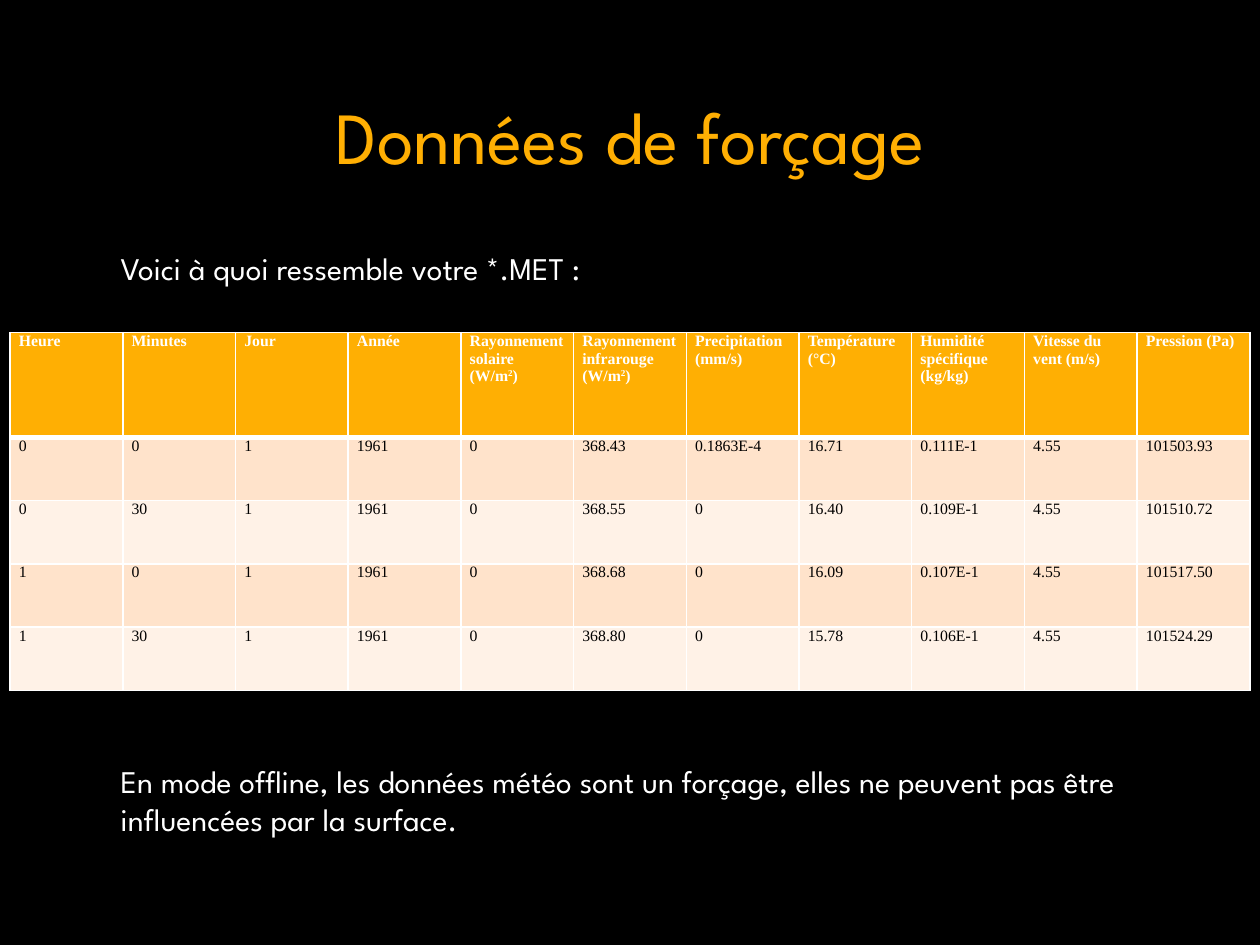
import pptx
import pptx.dml.color
import pptx.enum.text
import pptx.oxml
import pptx.oxml.ns
import pptx.util
from pptx.util import Inches

TITLE = "Données de forçage"
INTRO = "Voici à quoi ressemble votre *.MET :"
REMARK = ("En mode offline, les données météo sont un forçage, "
          "elles ne peuvent pas être influencées par la surface.")
# Text between two ^ marks is superscript.
HEADINGS = ["Heure", "Minutes", "Jour", "Année",
            "Rayonnement solaire (W/m^2^)", "Rayonnement infrarouge (W/m^2^)",
            "Precipitation (mm/s)", "Température (°C)",
            "Humidité spécifique (kg/kg)", "Vitesse du vent (m/s)", "Pression (Pa)"]
READINGS = [
    ["0", "0", "1", "1961", "0", "368.43", "0.1863E-4", "16.71", "0.111E-1", "4.55", "101503.93"],
    ["0", "30", "1", "1961", "0", "368.55", "0", "16.40", "0.109E-1", "4.55", "101510.72"],
    ["1", "0", "1", "1961", "0", "368.68", "0", "16.09", "0.107E-1", "4.55", "101517.50"],
    ["1", "30", "1", "1961", "0", "368.80", "0", "15.78", "0.106E-1", "4.55", "101524.29"],
]

THEME = {
    "background": "000000", "accent": "FFAF03", "light": "FFFFFF", "dark": "000000",
    "bands": ["FFE3CB", "FFF2E7"],
    "text_font": "League Spartan", "table_font": "Times New Roman",
    "title_size": 42, "body_size": 18, "table_size": 9,
    "rule": 1, "heading_rule": 3,
}
TITLE_BOX = (0.67, 0.64, 8.66, 0.86)
INTRO_BOX = (0.86, 1.93, 8.34, 0.4)
REMARK_BOX = (0.86, 6, 8.34, 0.71)
TABLE_BOX = (0.08, 2.64, 9.84, 2.84)
HEADING_HEIGHT = 0.83


def rgb(code):
    return pptx.dml.color.RGBColor.from_string(code)


def write(frame, text, font=THEME["text_font"], size=THEME["body_size"],
          color=THEME["light"], bold=False, align=pptx.enum.text.PP_ALIGN.LEFT):
    """Fill a text frame with one paragraph, raising text between ^ marks."""
    frame.word_wrap = True
    paragraph = frame.paragraphs[0]
    paragraph.alignment = align
    for index, part in enumerate(text.split("^")):
        run = paragraph.add_run()
        run.text = part
        run.font.name = font
        run.font.size = pptx.util.Pt(size)
        run.font.bold = bold
        run.font.color.rgb = rgb(color)
        if index % 2:
            run._r.get_or_add_rPr().set("baseline", "30000")


def set_borders(cell, **widths):
    """Draw the L, R, T and B cell borders; call before setting the fill."""
    properties = cell._tc.get_or_add_tcPr()
    for side, width in widths.items():
        properties.append(pptx.oxml.parse_xml(
            f'<a:ln{side} {pptx.oxml.ns.nsdecls("a")} w="{pptx.util.Pt(width)}">'
            f'<a:solidFill><a:srgbClr val="{THEME["light"]}"/></a:solidFill></a:ln{side}>'))


def add_note(slide, box, text):
    note = slide.shapes.add_textbox(*map(Inches, box))
    write(note.text_frame, text)


def add_readings(slide):
    left, top, width, height = TABLE_BOX
    rows = [HEADINGS] + READINGS
    table = slide.shapes.add_table(len(rows), len(HEADINGS), *map(Inches, TABLE_BOX)).table
    for column in table.columns:
        column.width = Inches(width / len(HEADINGS))
    for row_index, values in enumerate(rows):
        heading = row_index == 0
        table.rows[row_index].height = Inches(
            HEADING_HEIGHT if heading else (height - HEADING_HEIGHT) / len(READINGS))
        fill = THEME["accent"] if heading else THEME["bands"][(row_index - 1) % 2]
        rule, heavy = THEME["rule"], THEME["heading_rule"]
        for column_index, value in enumerate(values):
            cell = table.cell(row_index, column_index)
            cell.margin_left = cell.margin_right = Inches(0.07)
            cell.margin_top = cell.margin_bottom = 0
            set_borders(cell, L=rule, R=rule, T=heavy if row_index == 1 else rule,
                        B=heavy if heading else rule)
            cell.fill.solid()
            cell.fill.fore_color.rgb = rgb(fill)
            write(cell.text_frame, value, font=THEME["table_font"], size=THEME["table_size"],
                  color=THEME["light"] if heading else THEME["dark"], bold=heading)


def main():
    deck = pptx.Presentation()
    deck.slide_width, deck.slide_height = Inches(10), Inches(7.5)
    slide = deck.slides.add_slide(deck.slide_layouts.get_by_name("Title Only"))
    slide.background.fill.solid()
    slide.background.fill.fore_color.rgb = rgb(THEME["background"])

    title = slide.shapes.title
    title.left, title.top, title.width, title.height = map(Inches, TITLE_BOX)
    title.text_frame.vertical_anchor = pptx.enum.text.MSO_ANCHOR.MIDDLE
    write(title.text_frame, TITLE, size=THEME["title_size"], color=THEME["accent"],
          align=pptx.enum.text.PP_ALIGN.CENTER)
    add_readings(slide)
    add_note(slide, REMARK_BOX, REMARK)
    add_note(slide, INTRO_BOX, INTRO)
    deck.save("out.pptx")


if __name__ == "__main__":
    main()
